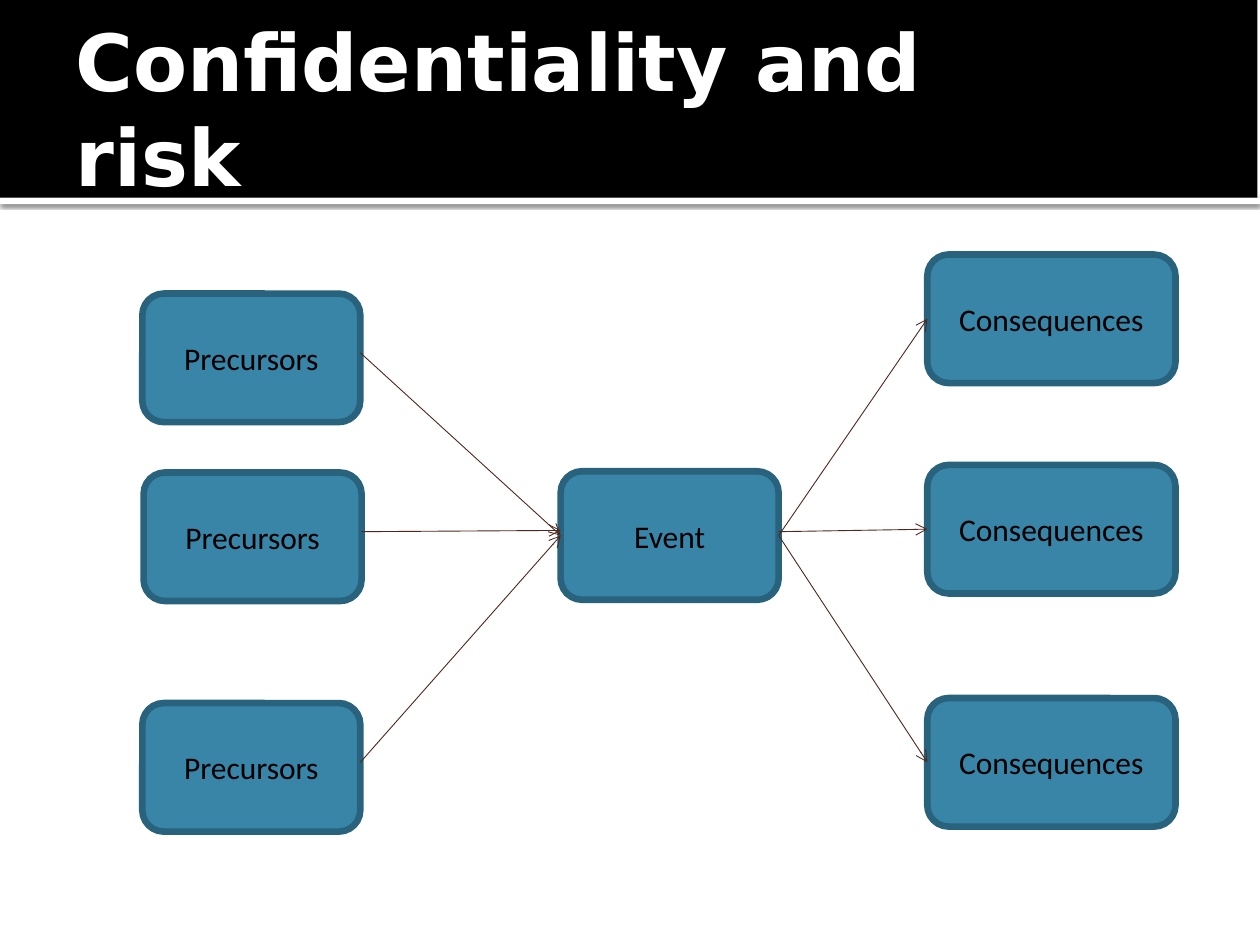
from lxml.etree import SubElement
from pptx import Presentation
from pptx.dml.color import RGBColor
from pptx.enum.shapes import MSO_CONNECTOR, MSO_SHAPE
from pptx.enum.text import MSO_ANCHOR, PP_ALIGN
from pptx.oxml.ns import qn
from pptx.util import Inches, Pt

HEX = {"band": "000000", "paper": "FFFFFF", "node": "3885A8",
       "edge": "29627C", "text": "000000", "arrow": "4F271C"}
CELL = Inches(10) / 100  # the slide is a grid of 100 columns by 75 rows


def cells(count):
    return round(count * CELL)


def color(name):
    return RGBColor.from_string(HEX[name])


def add_box(slide, kind, box, fill):
    shape = slide.shapes.add_shape(kind, *map(cells, box))
    shape.shadow.inherit = False
    shape.fill.solid()
    shape.fill.fore_color.rgb = color(fill)
    shape.line.fill.background()
    return shape


def set_text(shape, text, font, size, ink, bold=False):
    frame = shape.text_frame
    frame.word_wrap = True
    frame.vertical_anchor = MSO_ANCHOR.MIDDLE
    para = frame.paragraphs[0]
    para.text = text
    para.font.name, para.font.size, para.font.bold = font, Pt(size), bold
    para.font.color.rgb = color(ink)
    return para


def add_shade(shape):
    props = shape.fill._xPr
    list_ = props.find(qn("a:effectLst"))
    shade = SubElement(list_, qn("a:outerShdw"), blurRad=str(Pt(2.5)),
                       dist=str(Pt(0.8)), dir="5400000", algn="tl", rotWithShape="0")
    tint = SubElement(shade, qn("a:srgbClr"), val=HEX["band"])
    SubElement(tint, qn("a:alpha"), val="60000")


def add_node(slide, box, text):
    node = add_box(slide, MSO_SHAPE.ROUNDED_RECTANGLE, box, "node")
    node.line.color.rgb = color("edge")
    node.line.width = Pt(3.78)
    set_text(node, text, "Calibri", 18, "text").alignment = PP_ALIGN.CENTER


def add_arrow(slide, start, end):
    line = slide.shapes.add_connector(
        MSO_CONNECTOR.STRAIGHT, *map(cells, (*start, *end)))
    line.line.color.rgb = color("arrow")
    line.line.width = Pt(0.5)
    SubElement(line.line._get_or_add_ln(), qn("a:tailEnd"), type="arrow")
    SubElement(line._element.spPr, qn("a:effectLst"))


def add_head(slide, box, text):
    left, top, width, height = box
    # White strip with a soft shadow, then the band
    strip = add_box(slide, MSO_SHAPE.RECTANGLE,
                    (left, top + height, width, 0.5), "paper")
    add_shade(strip)
    add_box(slide, MSO_SHAPE.RECTANGLE, (left - 0.2, top, width, height), "band")
    # Title
    title = slide.shapes.add_textbox(
        *map(cells, (left + 5, top + 1.7, 76.5, height - 2)))
    set_text(title, text, "DejaVu Sans", 45, "paper", True)
    title.text_frame.margin_right = Inches(0.05)


def add_flow(slide, box):
    left, top, width, height = box
    tall, slim, wide = 10.2, 17.3, 19.7
    hub = left + 33.2
    far = left + width - wide
    mid = top + 22.3
    # Event in the middle
    add_node(slide, (hub, top + 17.2, slim, tall), "Event")
    # Precursors: column, row, and where their arrow meets the event
    for col, row, port in ((0, 3.1, mid), (0.1, 17.3, mid - 0.4), (0, 35.6, mid)):
        add_node(slide, (left + col, top + row, slim, tall), "Precursors")
        add_arrow(slide, (left + col + slim, top + row + 4.7), (hub, port))
    # Consequences: row, and where their arrow leaves the event
    for row, port in ((0, mid), (16.7, mid - 0.3), (35.2, mid)):
        add_node(slide, (far, top + row, wide, tall), "Consequences")
        add_arrow(slide, (hub + slim, port), (far, top + row + tall / 2))


def main():
    deck = Presentation()
    deck.slide_width, deck.slide_height = cells(100), cells(75)
    slide = deck.slides.add_slide(deck.slide_layouts[6])
    add_head(slide, (0, 0, 100, 15.7), "Confidentiality and risk")
    add_flow(slide, (11.3, 20.2, 82, 45.8))
    deck.save("out.pptx")


if __name__ == "__main__":
    main()
